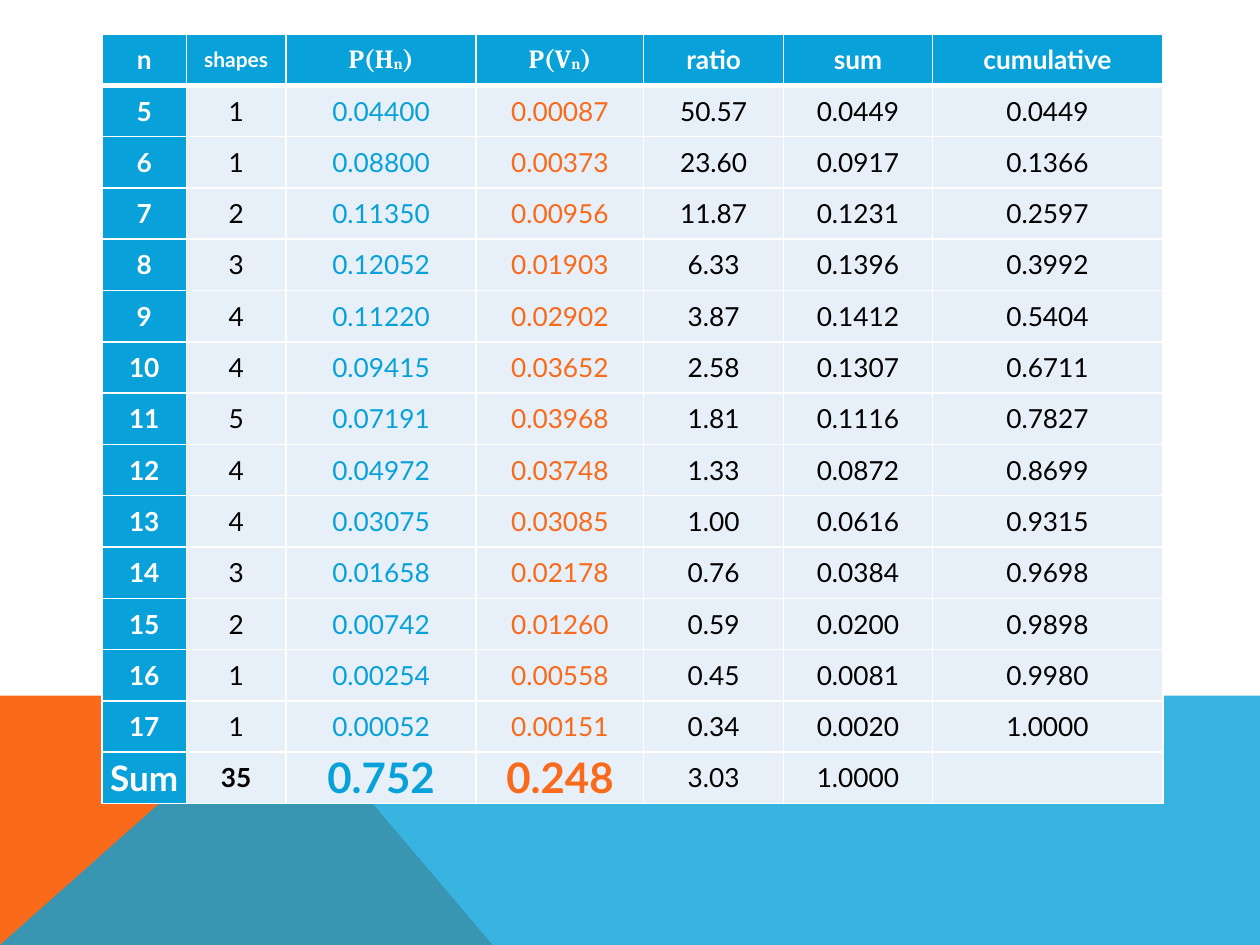
from dataclasses import dataclass
from lxml import etree
from pptx import Presentation
from pptx import util as u
from pptx.dml.color import RGBColor
from pptx.enum import text
from pptx.oxml.ns import qn


@dataclass(frozen=True)
class Theme:
    blue: str = "08A1D9"
    orange: str = "F96A1B"
    pale: str = "E7F0F8"
    white: str = "FFFFFF"
    black: str = "000000"
    font: str = "Lato"
    math_font: str = "Cambria"
    body: float = 15
    small: float = 12
    label: float = 20
    total: float = 24
    rule: float = 1
    header_rule: float = 3


T = Theme()
W, H = u.Inches(10), u.Inches(7.5)

COLUMNS = [0.67, 0.79, 1.51, 1.33, 1.11, 1.18, 1.83]
HEADER = ["n", "shapes", ("P(H", "n", ")"), ("P(V", "n", ")"),
          "ratio", "sum", "cumulative"]
ROWS = """
5 1 0.04400 0.00087 50.57 0.0449 0.0449
6 1 0.08800 0.00373 23.60 0.0917 0.1366
7 2 0.11350 0.00956 11.87 0.1231 0.2597
8 3 0.12052 0.01903 6.33 0.1396 0.3992
9 4 0.11220 0.02902 3.87 0.1412 0.5404
10 4 0.09415 0.03652 2.58 0.1307 0.6711
11 5 0.07191 0.03968 1.81 0.1116 0.7827
12 4 0.04972 0.03748 1.33 0.0872 0.8699
13 4 0.03075 0.03085 1.00 0.0616 0.9315
14 3 0.01658 0.02178 0.76 0.0384 0.9698
15 2 0.00742 0.01260 0.59 0.0200 0.9898
16 1 0.00254 0.00558 0.45 0.0081 0.9980
17 1 0.00052 0.00151 0.34 0.0020 1.0000
"""
TOTALS = ["Sum", "35", "0.752", "0.248", "3.03", "1.0000", ""]


def rgb(color):
    return RGBColor.from_string(color)


def polygon(s, box, points, color, alpha=None):
    """Draw a filled outline whose points are shares of the box."""
    x, y, w, h = box
    pts = [(x + px * w, y + py * h) for px, py in points]
    builder = s.shapes.build_freeform(*pts[0])
    builder.add_line_segments(pts[1:], close=True)
    sp = builder.convert_to_shape()
    sp.shadow.inherit = False
    sp.fill.solid()
    sp.fill.fore_color.rgb = rgb(color)
    sp.line.fill.background()
    if alpha:
        clr = sp.fill._xPr.find(".//" + qn("a:srgbClr"))
        etree.SubElement(clr, qn("a:alpha"), val=str(alpha * 1000))


def footer_band(s, box):
    """Orange slope with a translucent blue band over it."""
    peak = 0.223
    polygon(s, box, [(0, 1), (0, 0), (peak, 0), (0.391, 1)], T.orange)
    polygon(s, box, [(0, 1), (peak, 0), (1, 0), (1, 1)], T.blue, alpha=80)


def set_borders(cell, top, bottom):
    tc_pr = cell._tc.get_or_add_tcPr()
    sides = [("L", T.rule), ("R", T.rule), ("T", top), ("B", bottom)]
    for i, (side, width) in enumerate(sides):
        ln = etree.Element(qn("a:ln" + side), w=str(u.Pt(width)))
        fill = etree.SubElement(ln, qn("a:solidFill"))
        etree.SubElement(fill, qn("a:srgbClr"), val=T.white)
        tc_pr.insert(i, ln)


def cell_style(row, col, last):
    """Return size, colour, bold and font for a table position."""
    head = row == 0 or col == 0
    ink = T.white if head else {2: T.blue, 3: T.orange}.get(col, T.black)
    size = {(0, 1): T.small, (last, 0): T.label,
            (last, 2): T.total, (last, 3): T.total}.get((row, col), T.body)
    bold = head or (row == last and col <= 3)
    font = T.math_font if row == 0 and col in (2, 3) else T.font
    return size, ink, bold, font


def fill_cell(cell, value, row, col, last):
    set_borders(cell, T.header_rule if row == 1 else T.rule,
                T.header_rule if row == 0 else T.rule)
    cell.fill.solid()
    cell.fill.fore_color.rgb = rgb(T.blue if row == 0 or col == 0 else T.pale)
    cell.vertical_anchor = text.MSO_ANCHOR.MIDDLE
    cell.margin_left = cell.margin_right = u.Inches(0.05)
    cell.margin_top = cell.margin_bottom = 0
    p = cell.text_frame.paragraphs[0]
    p.alignment = text.PP_ALIGN.CENTER
    size, ink, bold, font = cell_style(row, col, last)
    parts = value if isinstance(value, tuple) else (value,)
    for i, part in enumerate(parts):
        if not part:
            continue
        r = p.add_run()
        r.text = part
        r.font.size, r.font.bold, r.font.name = u.Pt(size), bold, font
        r.font.color.rgb = rgb(ink)
        if i == 1:  # subscript index
            r.font._element.set("baseline", "-6000")


def probability_table(s, box):
    """Table with a header row, one row for each n, and totals."""
    x, y, w, h = box
    data = [HEADER, *(line.split() for line in ROWS.split("\n") if line), TOTALS]
    last = len(data) - 1
    tbl = s.shapes.add_table(len(data), len(COLUMNS), x, y, w, h).table
    for column, share in zip(tbl.columns, COLUMNS):
        column.width = int(w * share / sum(COLUMNS))
    for row, values in enumerate(data):
        tbl.rows[row].height = h // len(data)
        for col, value in enumerate(values):
            fill_cell(tbl.cell(row, col), value, row, col, last)


def main():
    prs = Presentation()
    prs.slide_width, prs.slide_height = W, H
    s = prs.slides.add_slide(prs.slide_layouts[6])
    band_top = u.Inches(5.52)
    footer_band(s, (0, band_top, W, H - band_top))
    probability_table(s, (u.Inches(0.81), u.Inches(0.27),
                          u.Inches(8.42), u.Inches(6.11)))
    prs.save("out.pptx")


if __name__ == "__main__":
    main()
